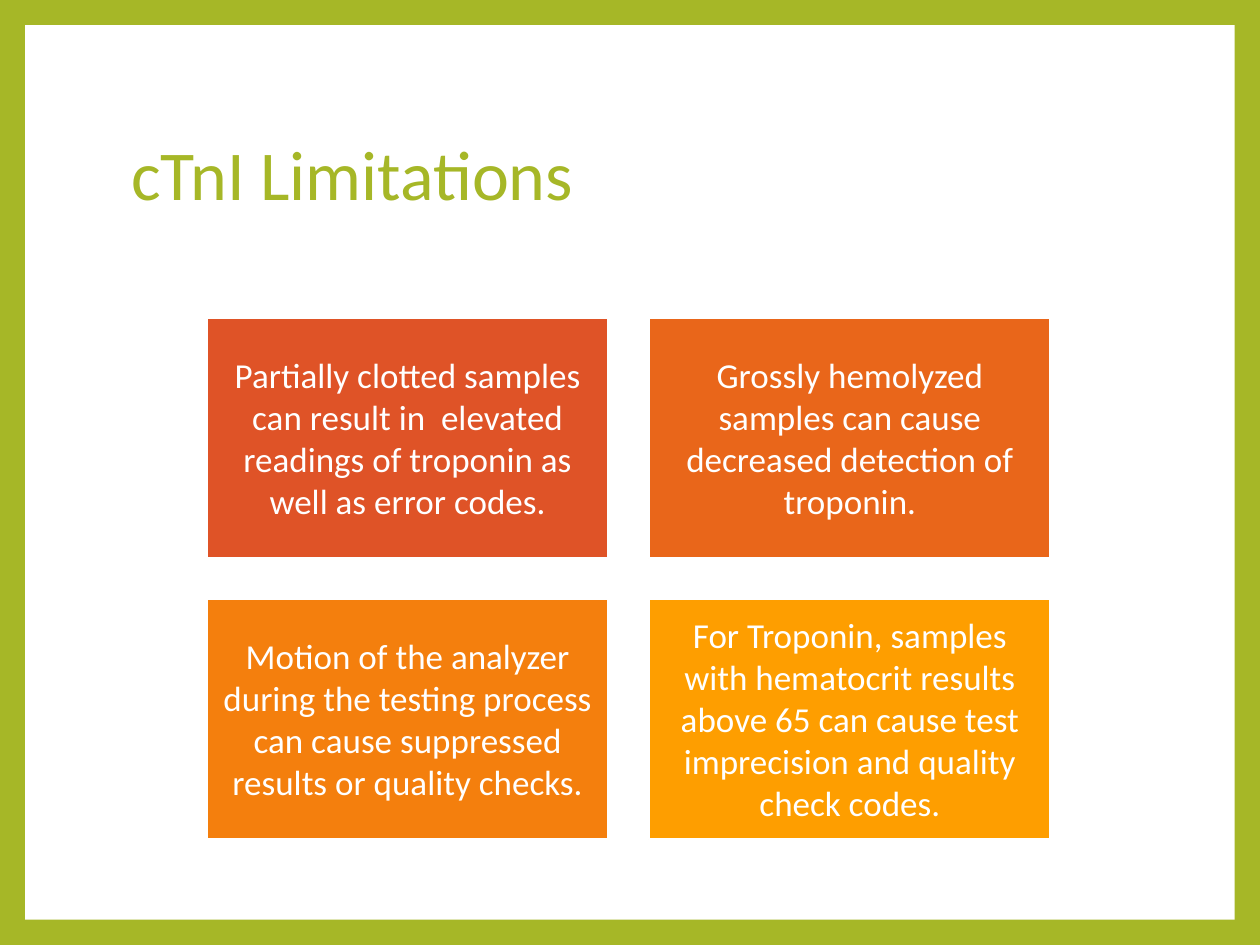
from pptx import Presentation
from pptx.dml.color import RGBColor
from pptx.enum import shapes, text
from pptx.util import Inches, Pt

GREEN, WHITE = "A6B727", "FFFFFF"
FONT = "Calibri"

LIMITATIONS = [
    ("DF5327", "Partially clotted samples can result in  elevated readings "
               "of troponin as well as error codes."),
    ("E9661A", "Grossly hemolyzed samples can cause decreased detection of troponin."),
    ("F47F0D", "Motion of the analyzer during the testing process can cause "
               "suppressed results or quality checks."),
    ("FE9E00", "For Troponin, samples with hematocrit results above 65 can cause "
               "test imprecision and quality check codes."),
]


def rgb(hex_color):
    return RGBColor.from_string(hex_color)


def add_rect(slide, left, top, width, height, fill):
    rect = slide.shapes.add_shape(shapes.MSO_SHAPE.RECTANGLE, Inches(left),
                                  Inches(top), Inches(width), Inches(height))
    rect.shadow.inherit = False
    rect.fill.solid()
    rect.fill.fore_color.rgb = rgb(fill)
    return rect


def add_run(paragraph, words, size, color):
    run = paragraph.add_run()
    run.text = words
    run.font.name = FONT
    run.font.size = Pt(size)
    run.font.color.rgb = rgb(color)


def add_frame(slide, left, top, width, height):
    """White panel on a green background, behind the title."""
    slide.background.fill.solid()
    slide.background.fill.fore_color.rgb = rgb(GREEN)
    panel = add_rect(slide, left, top, width, height, WHITE)
    panel.line.fill.background()
    slide.shapes.title.element.addprevious(panel.element)


def set_title(slide, left, top, width, height):
    title = slide.shapes.title
    title.left, title.top = Inches(left), Inches(top)
    title.width, title.height = Inches(width), Inches(height)
    frame = title.text_frame
    frame.word_wrap = True
    frame.vertical_anchor = text.MSO_ANCHOR.MIDDLE
    paragraph = frame.paragraphs[0]
    paragraph.alignment = text.PP_ALIGN.LEFT
    paragraph.line_spacing = 0.9
    add_run(paragraph, "cTnI Limitations", 40, GREEN)


def add_card(slide, left, top, width, height, fill, words):
    card = add_rect(slide, left, top, width, height, fill)
    card.line.color.rgb = rgb(WHITE)
    card.line.width = Pt(1.5)
    frame = card.text_frame
    frame.word_wrap = True
    frame.vertical_anchor = text.MSO_ANCHOR.MIDDLE
    frame.margin_left = frame.margin_right = Inches(0.08)
    frame.margin_top = frame.margin_bottom = Inches(0.08)
    paragraph = frame.paragraphs[0]
    paragraph.alignment = text.PP_ALIGN.CENTER
    paragraph.space_after = Pt(7)
    add_run(paragraph, words, 20, WHITE)


def add_card_grid(slide, left, top, width, height, gap=0.32, columns=2):
    rows = len(LIMITATIONS) // columns
    card_width = (width - gap * (columns - 1)) / columns
    card_height = (height - gap * (rows - 1)) / rows
    for index, (fill, words) in enumerate(LIMITATIONS):
        row, column = divmod(index, columns)
        add_card(slide, left + column * (card_width + gap),
                 top + row * (card_height + gap),
                 card_width, card_height, fill, words)


def main():
    prs = Presentation()
    prs.slide_width, prs.slide_height = Inches(10), Inches(7.5)
    slide = prs.slides.add_slide(prs.slide_layouts[5])  # title only
    add_frame(slide, 0.2, 0.2, 9.6, 7.1)
    set_title(slide, 0.94, 0.67, 8.1, 1.48)
    add_card_grid(slide, 1.64, 2.52, 6.7, 4.14)
    prs.save("out.pptx")


if __name__ == "__main__":
    main()
